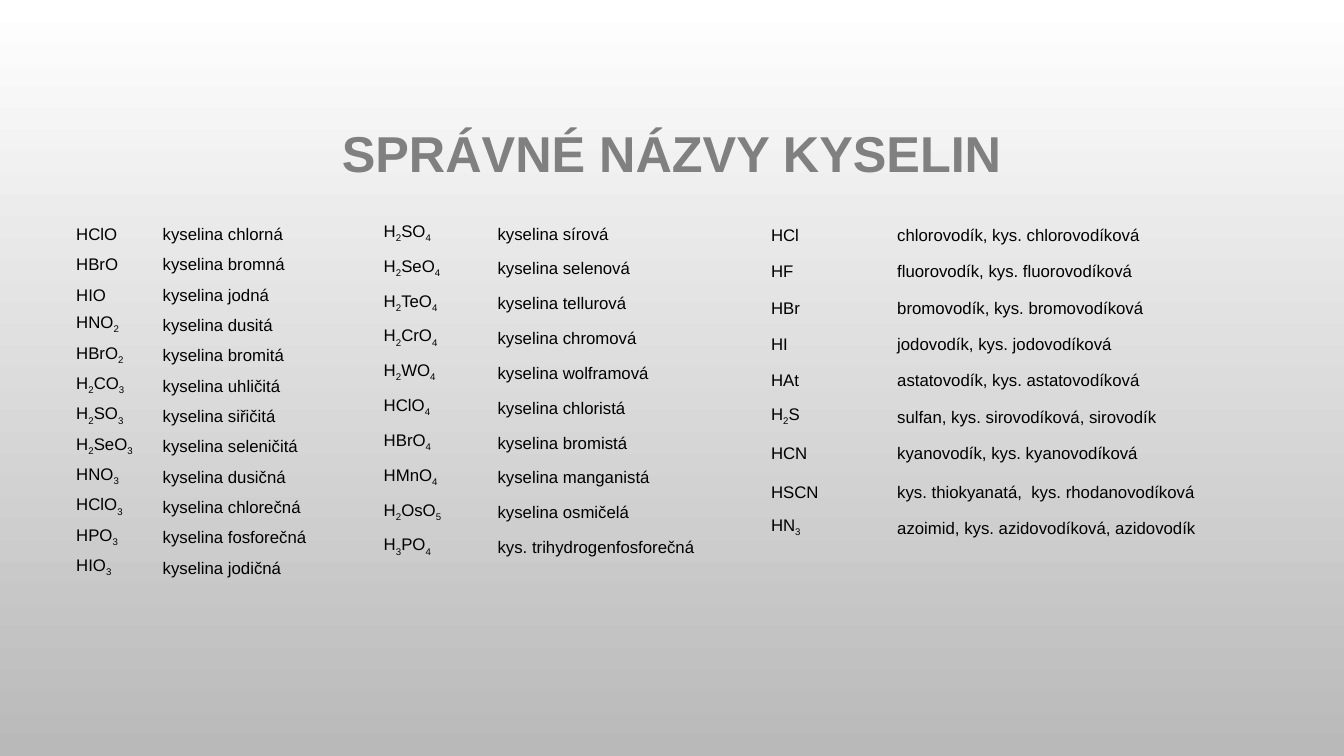
"""Build a slide listing the correct Czech names of acids in three tables."""
from itertools import groupby

from pptx import Presentation
from pptx.dml.color import RGBColor
from pptx.enum.text import MSO_ANCHOR, PP_ALIGN
from pptx.oxml.ns import qn
from pptx.util import Cm, Pt

CENTER = PP_ALIGN.CENTER
MIDDLE = MSO_ANCHOR.MIDDLE
BOTTOM = MSO_ANCHOR.BOTTOM
FONT = "Arial"
COLORS = {"top": "FFFFFF", "bottom": "B9B9B9", "title": "808080", "text": "000000"}
PLAIN_TABLE_STYLE = "{2D5ABB26-0587-4C30-8999-92F81FD0307C}"
TITLE_ONLY = 5

LOWER_OXOACIDS = [
    ("HClO", "kyselina chlorná"),
    ("HBrO", "kyselina bromná"),
    ("HIO", "kyselina jodná"),
    ("HNO2", "kyselina dusitá"),
    ("HBrO2", "kyselina bromitá"),
    ("H2CO3", "kyselina uhličitá"),
    ("H2SO3", "kyselina siřičitá"),
    ("H2SeO3", "kyselina seleničitá"),
    ("HNO3", "kyselina dusičná"),
    ("HClO3", "kyselina chlorečná"),
    ("HPO3", "kyselina fosforečná"),
    ("HIO3", "kyselina jodičná"),
]
HIGHER_OXOACIDS = [
    ("H2SO4", "kyselina sírová"),
    ("H2SeO4", "kyselina selenová"),
    ("H2TeO4", "kyselina tellurová"),
    ("H2CrO4", "kyselina chromová"),
    ("H2WO4", "kyselina wolframová"),
    ("HClO4", "kyselina chloristá"),
    ("HBrO4", "kyselina bromistá"),
    ("HMnO4", "kyselina manganistá"),
    ("H2OsO5", "kyselina osmičelá"),
    ("H3PO4", "kys. trihydrogenfosforečná"),
]
OXYGEN_FREE_ACIDS = [
    ("HCl", "chlorovodík, kys. chlorovodíková"),
    ("HF", "fluorovodík, kys. fluorovodíková"),
    ("HBr", "bromovodík, kys. bromovodíková"),
    ("HI", "jodovodík, kys. jodovodíková"),
    ("HAt", "astatovodík, kys. astatovodíková"),
    ("H2S", "sulfan, kys. sirovodíková, sirovodík"),
    ("HCN", "kyanovodík, kys. kyanovodíková"),
    ("HSCN", "kys. thiokyanatá,  kys. rhodanovodíková"),
    ("HN3", "azoimid, kys. azidovodíková, azidovodík"),
]
TABLES = [
    (LOWER_OXOACIDS, 1.9, 5.38, 2.18, 4.34, 9.19),
    (HIGHER_OXOACIDS, 9.65, 5.26, 2.87, 6.1, 8.79),
    (OXYGEN_FREE_ACIDS, 19.41, 5.26, 3.18, 9.52, 8.24),
]


def style(r, size, color):
    r.font.name = FONT
    r.font.size = Pt(size)
    r.font.color.rgb = RGBColor.from_string(COLORS[color])


prs = Presentation()
prs.slide_width, prs.slide_height = Cm(33.87), Cm(19.05)
s = prs.slides.add_slide(prs.slide_layouts[TITLE_ONLY])

bg = s.background.fill
bg.gradient()
bg.gradient_angle = 270
for stop, name, position in zip(bg.gradient_stops, ("top", "bottom"), (0, 1)):
    stop.color.rgb = RGBColor.from_string(COLORS[name])
    stop.position = position

title = s.shapes.title
title.left, title.top, title.width, title.height = Cm(2.54), Cm(1.7), Cm(28.78), Cm(4.47)
tf = title.text_frame
tf.text = "SPRÁVNÉ NÁZVY KYSELIN"
tf.vertical_anchor = MIDDLE
p = tf.paragraphs[0]
p.alignment = CENTER
p.line_spacing = 0.9
style(p.runs[0], 36, "title")
p.runs[0].font.bold = True

for acids, left, top, formula_width, name_width, height in TABLES:
    frame = s.shapes.add_table(len(acids), 2, Cm(left), Cm(top),
                               Cm(formula_width + name_width), Cm(height))
    table = frame.table
    table.first_row = table.horz_banding = False
    frame._element.find(".//" + qn("a:tableStyleId")).text = PLAIN_TABLE_STYLE
    table.columns[0].width, table.columns[1].width = Cm(formula_width), Cm(name_width)
    for row, acid in zip(table.rows, acids):
        row.height = Cm(height / len(acids))
        if acid[0] == "HSCN":
            row.height += Cm(0.06)
        for cell, text in zip(row.cells, acid):
            cell.fill.background()
            cell.vertical_anchor = BOTTOM
            cell.margin_left = cell.margin_right = cell.margin_top = Cm(0.02)
            cell.margin_bottom = 0
            p = cell.text_frame.paragraphs[0]
            for is_index, chars in groupby(text, str.isdigit):
                r = p.add_run()
                r.text = "".join(chars)
                style(r, 12, "text")
                if is_index:
                    r._r.get_or_add_rPr().set("baseline", "-25000")

prs.save("out.pptx")
